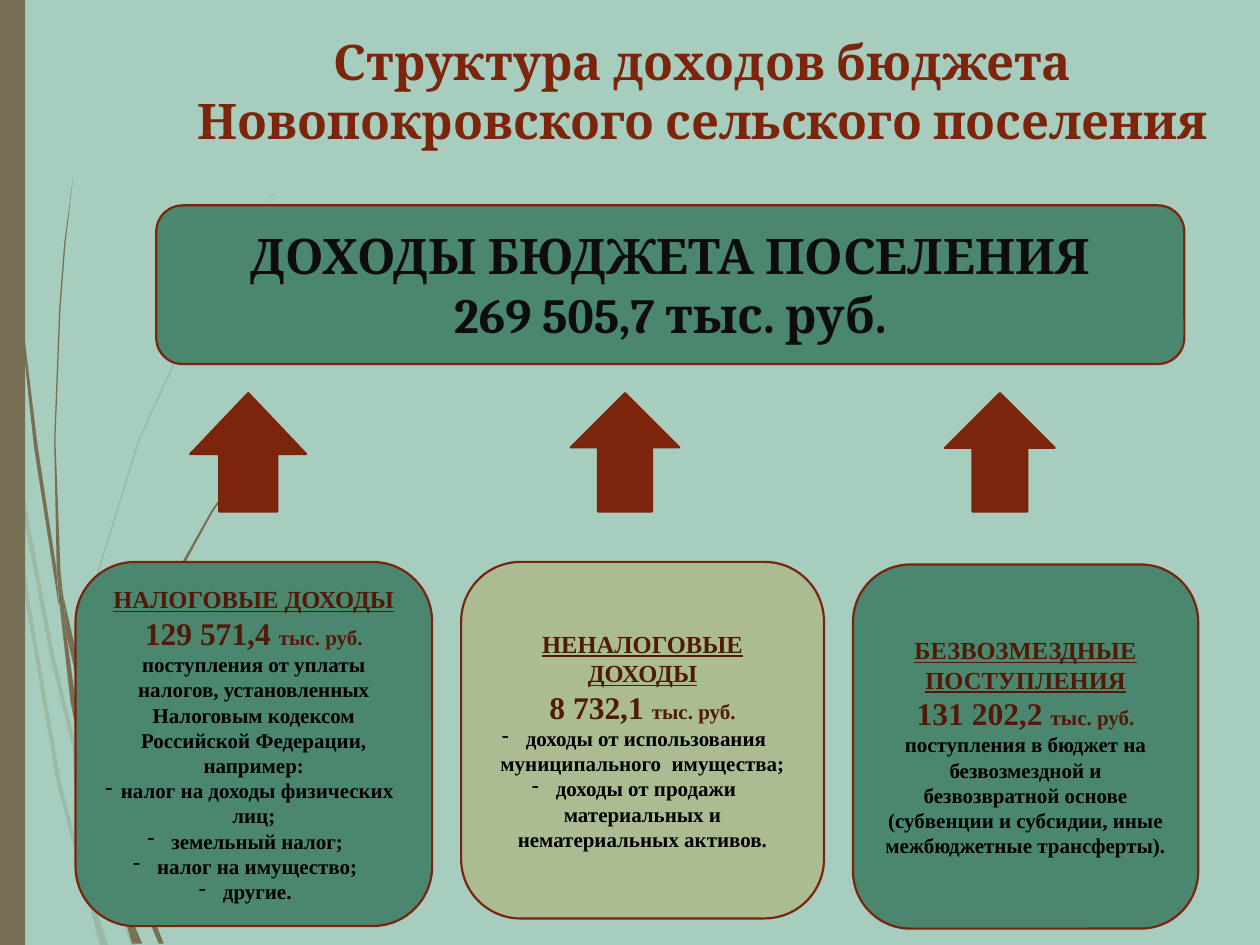
from dataclasses import dataclass

from lxml.etree import SubElement
from pptx import Presentation
from pptx.dml.color import RGBColor
from pptx.enum.shapes import MSO_SHAPE
from pptx.enum.text import MSO_ANCHOR, MSO_AUTO_SIZE, PP_ALIGN
from pptx.oxml.ns import qn
from pptx.util import Inches, Pt

UNIT = "тыс. руб."

FAINT_WISPS = [
    [(0.08, 3.5), (0.06, 3.22), (0, 2.82), (0, 2.99), (0.07, 3.44)],
    [(0.4, 5.22), (0.59, 5.99), (0.59, 5.86), (0.43, 5.2), (0.1, 3.45), (0.12, 3.76)],
    [(0.64, 6.07), (0.61, 5.96), (0.61, 6.1), (0.85, 6.94), (1.04, 7.5), (1.08, 7.5), (0.88, 6.92)],
    [(0.83, 7.5), (0.86, 7.5), (0.73, 7.11)],
    [(0.64, 6.83), (0.48, 6.19), (0.22, 4.69), (0.12, 3.76), (0.08, 3.5), (0.19, 4.7),
     (0.45, 6.21), (0.64, 6.93), (0.7, 7.14), (0.69, 7.07)],
    [(0.58, 5.99), (0.6, 6.46), (0.64, 6.83), (0.67, 6.92), (0.73, 7.11), (0.72, 7.06),
     (0.63, 6.46), (0.61, 6.1), (0.61, 6.08)],
    [(0.61, 5.84), (0.76, 4.62), (1.11, 3.49), (1.59, 2.45), (1.87, 1.98), (2.01, 1.75),
     (2.17, 1.54), (2.17, 1.53), (2.01, 1.75), (1.86, 1.97), (1.58, 2.44), (1.1, 3.48),
     (0.75, 4.61), (0.59, 5.84), (0.59, 5.86), (0.61, 5.96)],
    [(0.7, 7.14), (0.79, 7.5), (0.82, 7.5)],
    [(0.61, 6.08), (0.61, 6.1), (0.61, 5.96), (0.59, 5.86), (0.58, 5.99)],
    [(0.67, 6.92), (0.65, 6.83), (0.69, 7.07), (0.7, 7.14), (0.82, 7.5), (0.83, 7.5), (0.73, 7.11)],
]

SOLID_WISPS = [
    [(0.05, 1.1), (0.14, 2.33), (0.27, 3.55), (0.46, 4.77), (0.47, 4.81), (0.45, 4.57),
     (0.45, 4.53), (0.3, 3.55), (0.15, 2.32), (0.06, 1.09), (0.04, 0.48), (0.03, 0),
     (0.02, 0), (0.03, 0.48)],
    [(0.73, 5.92), (0.88, 6.45), (0.88, 6.31), (0.77, 5.9), (0.5, 4.72), (0.53, 5.05)],
    [(0.94, 6.49), (0.91, 6.41), (0.91, 6.56), (1.09, 7.08), (1.26, 7.49), (1.3, 7.49), (1.13, 7.06)],
    [(0.91, 6.91), (0.81, 6.57), (0.6, 5.56), (0.53, 5.05), (0.47, 4.77), (0.56, 5.57),
     (0.77, 6.59), (0.92, 7.08), (0.97, 7.22), (0.96, 7.17)],
    [(0.5, 4.72), (0.48, 4.53), (0.44, 3.49), (0.48, 2.45), (0.52, 1.93), (0.58, 1.41),
     (0.51, 1.93), (0.47, 2.45), (0.43, 3.49), (0.45, 4.49), (0.49, 4.72)],
    [(1.1, 7.49), (1.13, 7.49), (1, 7.19)],
    [(0.47, 4.77), (0.53, 5.05), (0.5, 4.72), (0.49, 4.72), (0.45, 4.49), (0.45, 4.53)],
    [(0.91, 6.33), (1.03, 5.52), (1.31, 4.76), (1.69, 4.06), (1.91, 3.74), (2.03, 3.59),
     (2.16, 3.44), (2.15, 3.44), (2.03, 3.58), (1.91, 3.73), (1.68, 4.05), (1.29, 4.74),
     (1.01, 5.51), (0.88, 6.31), (0.91, 6.41)],
    [(0.97, 7.22), (1.05, 7.49), (1.08, 7.49)],
    [(0.96, 7.06), (0.91, 6.91), (0.96, 7.17), (0.97, 7.22), (1.08, 7.49), (1.1, 7.49), (1, 7.19)],
]


@dataclass(frozen=True)
class Theme:
    """Colours, fonts and type sizes."""
    background: str = "A6CDBD"
    wood: str = "766F54"
    accent: str = "7C240C"
    outline: str = "7A240C"
    heading: str = "521808"
    total: str = "0D0D0D"
    body: str = "000000"
    green: str = "4B866E"
    olive: str = "ACBC92"
    title_font: str = "Cambria"
    card_font: str = "Times New Roman"
    title_size: int = 28
    amount_size: int = 18
    heading_size: int = 14
    body_size: int = 12


class SlideBuilder:
    """Draws styled elements on one slide."""

    def __init__(self, slide, theme):
        self.slide = slide
        self.theme = theme

    def paint(self, shape, fill, line=None):
        shape.shadow.inherit = False
        shape.fill.solid()
        shape.fill.fore_color.rgb = RGBColor.from_string(fill)
        if line is None:
            shape.line.fill.background()
        else:
            shape.line.color.rgb = RGBColor.from_string(line)
            shape.line.width = Pt(1.25)

    def format_run(self, run, size, color, font, underline=None):
        run.font.name = font
        run.font.size = Pt(size)
        run.font.bold = True
        run.font.underline = underline
        run.font.color.rgb = RGBColor.from_string(color)

    def background(self):
        fill = self.slide.background.fill
        fill.solid()
        fill.fore_color.rgb = RGBColor.from_string(self.theme.background)

    def wisp(self, points, opacity=100):
        corners = [(Inches(x), Inches(y)) for x, y in points]
        builder = self.slide.shapes.build_freeform(*corners[0])
        builder.add_line_segments(corners[1:], close=True)
        shape = builder.convert_to_shape()
        self.paint(shape, self.theme.wood)
        if opacity < 100:
            color = shape._element.xpath(".//p:spPr/a:solidFill/a:srgbClr")[0]
            SubElement(color, qn("a:alpha"), val=str(opacity * 1000))

    def box(self, kind, bounds, fill, line=None):
        shape = self.slide.shapes.add_shape(kind, *map(Inches, bounds))
        self.paint(shape, fill, line)
        shape.text_frame.word_wrap = True
        shape.text_frame.vertical_anchor = MSO_ANCHOR.MIDDLE
        return shape

    def title(self, text, bounds):
        shape = self.slide.shapes.title
        shape.left, shape.top, shape.width, shape.height = map(Inches, bounds)
        frame = shape.text_frame
        frame.text = text
        frame.auto_size = MSO_AUTO_SIZE.NONE
        frame.vertical_anchor = MSO_ANCHOR.MIDDLE
        frame.paragraphs[0].alignment = PP_ALIGN.CENTER
        theme = self.theme
        self.format_run(frame.paragraphs[0].runs[0], theme.title_size, theme.accent, theme.title_font)

    def arrow(self, bounds, head=0.5):
        shape = self.box(MSO_SHAPE.DOWN_ARROW, bounds, self.theme.accent, self.theme.outline)
        shape.rotation = 180
        shape.adjustments[1] = head

    def total(self, text, bounds):
        theme = self.theme
        shape = self.box(MSO_SHAPE.ROUNDED_RECTANGLE, bounds, theme.green, theme.accent)
        shape.text_frame.text = text
        for paragraph in shape.text_frame.paragraphs:
            paragraph.alignment = PP_ALIGN.CENTER
            self.format_run(paragraph.runs[0], theme.title_size, theme.total, theme.title_font)

    def card(self, bounds, fill, heading, amount, notes=(), bullets=()):
        theme = self.theme
        font = theme.card_font
        frame = self.box(MSO_SHAPE.ROUNDED_RECTANGLE, bounds, fill, theme.outline).text_frame
        frame.text = "\n".join([heading, f"{amount} ", *notes, *bullets])
        first, figure, *details = frame.paragraphs
        self.format_run(first.runs[0], theme.heading_size, theme.heading, font, True)
        self.format_run(figure.runs[0], theme.amount_size, theme.heading, font)
        unit = figure.add_run()
        unit.text = UNIT
        self.format_run(unit, theme.body_size, theme.heading, font)
        for paragraph in details:
            self.format_run(paragraph.runs[0], theme.body_size, theme.body, font)
        for paragraph in details[len(notes):]:
            properties = paragraph._p.get_or_add_pPr()
            properties.set("marL", "0")
            properties.set("indent", str(-Inches(0.19)))
            SubElement(properties, qn("a:buFontTx"))
            SubElement(properties, qn("a:buChar"), char="-")
        for paragraph in frame.paragraphs:
            paragraph.alignment = PP_ALIGN.CENTER


def main():
    presentation = Presentation()
    presentation.slide_width, presentation.slide_height = Inches(10), Inches(7.5)
    theme = Theme()
    builder = SlideBuilder(presentation.slides.add_slide(presentation.slide_layouts[5]), theme)
    builder.background()
    for points in FAINT_WISPS:
        builder.wisp(points, opacity=20)
    for points in SOLID_WISPS:
        builder.wisp(points)
    builder.box(MSO_SHAPE.RECTANGLE, (0, 0, 0.2, 7.5), theme.wood)
    builder.title("Структура доходов бюджета Новопокровского сельского поселения", (1.28, 0.24, 8.59, 0.95))
    for left, width, head in [(1.51, 0.92, 0.526), (7.5, 0.87, 0.5), (4.53, 0.86, 0.5)]:
        builder.arrow((left, 3.12, width, 0.94), head)
    builder.total("ДОХОДЫ БЮДЖЕТА ПОСЕЛЕНИЯ\n269 505,7 тыс. руб.", (1.24, 1.63, 8.16, 1.26))
    builder.card(
        (0.6, 4.46, 2.83, 2.89), theme.green, "НАЛОГОВЫЕ ДОХОДЫ", "129 571,4",
        notes=["поступления от уплаты налогов, установленных Налоговым кодексом",
               "Российской Федерации,", "например:"],
        bullets=["налог на доходы физических лиц;", "земельный налог;", "налог на имущество;", "другие."])
    builder.card(
        (3.66, 4.46, 2.88, 2.83), theme.olive, "НЕНАЛОГОВЫЕ ДОХОДЫ", "8 732,1",
        bullets=["доходы от использования муниципального  имущества;",
                 "доходы от продажи материальных и нематериальных активов."])
    builder.card(
        (6.77, 4.48, 2.74, 2.89), theme.green, "БЕЗВОЗМЕЗДНЫЕ ПОСТУПЛЕНИЯ", "131 202,2",
        notes=["поступления в бюджет на безвозмездной и безвозвратной основе",
               "(субвенции и субсидии, иные межбюджетные трансферты)."])
    presentation.save("out.pptx")


if __name__ == "__main__":
    main()
